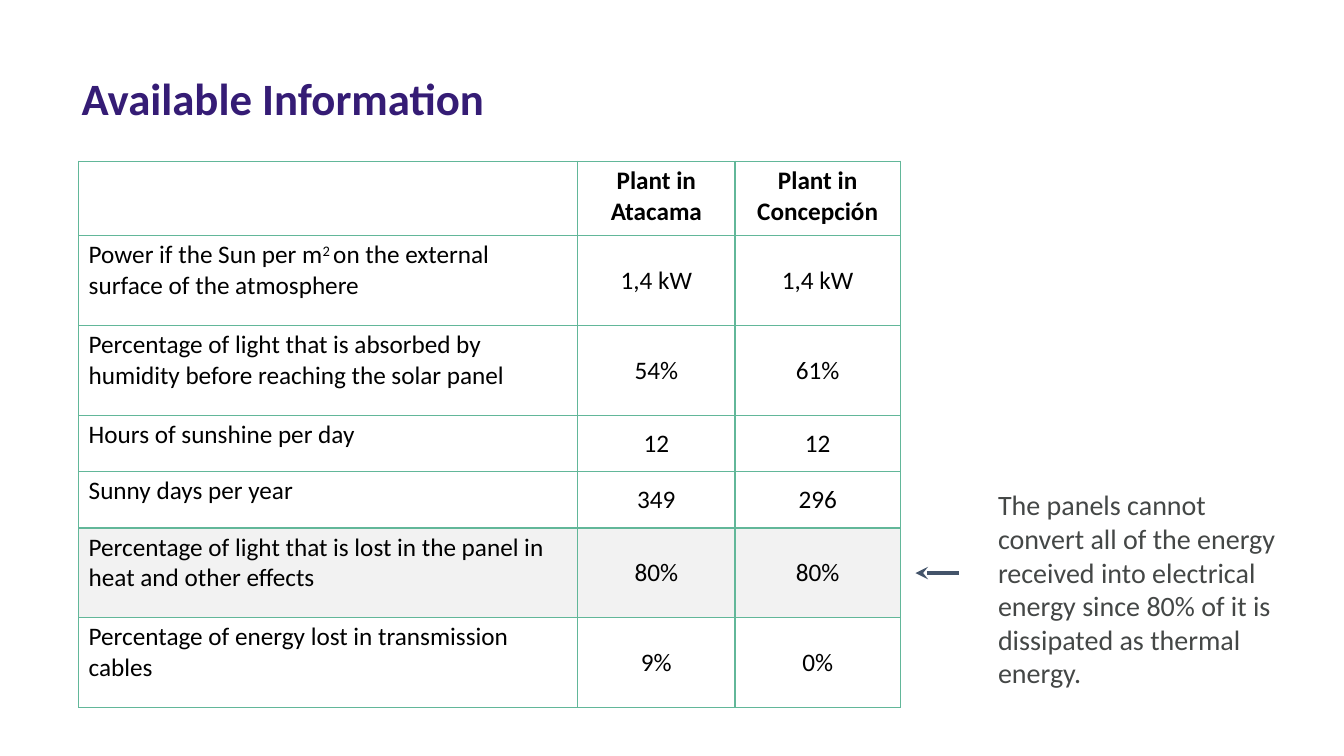
import pptx
import pptx.dml.color
import pptx.enum.shapes
import pptx.enum.text
import pptx.oxml
import pptx.oxml.ns
import pptx.util
from dataclasses import dataclass

Inches = pptx.util.Inches
Align = pptx.enum.text.PP_ALIGN
Anchor = pptx.enum.text.MSO_ANCHOR

TITLE = "Available Information"
HEADER = ("", "Plant in Atacama", "Plant in Concepción")
# Each label is a list of (text, is superscript) runs.
ROWS = [
    ([("Power if the Sun per m", False), ("2 ", True),
      ("on the external surface of the atmosphere", False)], "1,4 kW", "1,4 kW"),
    ([("Percentage of light that is absorbed by humidity before reaching "
       "the solar panel", False)], "54%", "61%"),
    ([("Hours of sunshine per day", False)], "12", "12"),
    ([("Sunny days per year", False)], "349", "296"),
    ([("Percentage of light that is lost in the panel in heat and other effects",
       False)], "80%", "80%"),
    ([("Percentage of energy lost in transmission cables", False)], "9%", "0%"),
]
HIGHLIGHTED_ROW = 5
NOTE = ("The panels cannot convert all of the energy received into electrical "
        "energy since 80% of it is dissipated as thermal energy.")

TABLE_LEFT, TABLE_TOP = 0.78, 1.6
COLUMN_WIDTHS = (4.95, 1.56, 1.64)
TALL, SHORT = 0.89, 0.56
ROW_HEIGHTS = (0.74, TALL, TALL, SHORT, SHORT, TALL, TALL)


@dataclass(frozen=True)
class Theme:
    font: str = "Calibri"
    title: str = "351C75"
    text: str = "000000"
    note: str = "444746"
    border: str = "62B799"
    background: str = "FFFFFF"
    highlight: str = "F2F2F2"
    arrow: str = "44546A"
    title_size: int = 32
    note_size: int = 20
    table_size: int = 18


THEME = Theme()


def rgb(color):
    return pptx.dml.color.RGBColor.from_string(color)


def add_run(paragraph, text, size, color, bold=False, superscript=False):
    run = paragraph.add_run()
    run.text = text
    run.font.name = THEME.font
    run.font.size = pptx.util.Pt(size)
    run.font.bold = bold
    run.font.color.rgb = rgb(color)
    if superscript:
        run.font._element.set("baseline", "30000")


def add_xml(parent, xml):
    namespace = pptx.oxml.ns.nsdecls("a")
    parent.append(pptx.oxml.parse_xml(xml.replace("NS", namespace, 1)))


def format_cell(cell, fill):
    cell.margin_left = cell.margin_right = Inches(0.1)
    cell.margin_top = cell.margin_bottom = Inches(0.04)
    for side in ("lnL", "lnR", "lnT", "lnB"):
        add_xml(cell._tc.get_or_add_tcPr(),
                f'<a:{side} NS w="12700"><a:solidFill>'
                f'<a:srgbClr val="{THEME.border}"/></a:solidFill></a:{side}>')
    cell.fill.solid()
    cell.fill.fore_color.rgb = rgb(fill)


def add_title(slide):
    title = slide.shapes.title
    title.left, title.top = Inches(0.71), Inches(0.65)
    title.width, title.height = Inches(8.59), Inches(0.64)
    frame = title.text_frame
    frame.auto_size = pptx.enum.text.MSO_AUTO_SIZE.NONE
    frame.vertical_anchor = Anchor.TOP
    frame.paragraphs[0].alignment = Align.LEFT
    add_run(frame.paragraphs[0], TITLE, THEME.title_size, THEME.title, bold=True)


def add_plant_table(slide):
    table = slide.shapes.add_table(
        len(ROW_HEIGHTS), len(COLUMN_WIDTHS), Inches(TABLE_LEFT), Inches(TABLE_TOP),
        Inches(sum(COLUMN_WIDTHS)), Inches(sum(ROW_HEIGHTS))).table
    table.first_row = table.horz_banding = False
    for column, width in zip(table.columns, COLUMN_WIDTHS):
        column.width = Inches(width)
    for row, height in zip(table.rows, ROW_HEIGHTS):
        row.height = Inches(height)

    for row_index, values in enumerate([HEADER] + ROWS):
        is_header = row_index == 0
        fill = THEME.highlight if row_index == HIGHLIGHTED_ROW else THEME.background
        for column_index, value in enumerate(values):
            cell = table.cell(row_index, column_index)
            format_cell(cell, fill)
            is_value = column_index > 0
            if is_value and not is_header:
                cell.vertical_anchor = Anchor.MIDDLE
            paragraph = cell.text_frame.paragraphs[0]
            paragraph.alignment = Align.CENTER if is_value else Align.LEFT
            runs = [(value, False)] if isinstance(value, str) else value
            for text, superscript in runs:
                if text:
                    add_run(paragraph, text, THEME.table_size, THEME.text,
                            is_header, superscript)


def add_note(slide):
    box = slide.shapes.add_textbox(Inches(9.8), Inches(4.79), Inches(3.15), Inches(2.12))
    box.text_frame.word_wrap = True
    add_run(box.text_frame.paragraphs[0], NOTE, THEME.note_size, THEME.note)


def add_arrow(slide):
    """Point from the note to the highlighted row."""
    middle = (TABLE_TOP + sum(ROW_HEIGHTS[:HIGHLIGHTED_ROW])
              + ROW_HEIGHTS[HIGHLIGHTED_ROW] / 2)
    arrow = slide.shapes.add_connector(
        pptx.enum.shapes.MSO_CONNECTOR.STRAIGHT,
        Inches(9.51), Inches(middle), Inches(9.08), Inches(middle))
    arrow.line.width = pptx.util.Pt(3)
    arrow.line.color.rgb = rgb(THEME.arrow)
    add_xml(arrow.line._get_or_add_ln(), '<a:tailEnd NS type="stealth"/>')
    add_xml(arrow._element.spPr, '<a:effectLst NS/>')


def main():
    presentation = pptx.Presentation()
    presentation.slide_width = Inches(13.33)
    presentation.slide_height = Inches(7.5)
    title_only = presentation.slide_layouts[5]
    slide = presentation.slides.add_slide(title_only)
    slide.background.fill.solid()
    slide.background.fill.fore_color.rgb = rgb(THEME.background)
    add_title(slide)
    add_plant_table(slide)
    add_note(slide)
    add_arrow(slide)
    presentation.save("out.pptx")


if __name__ == "__main__":
    main()
